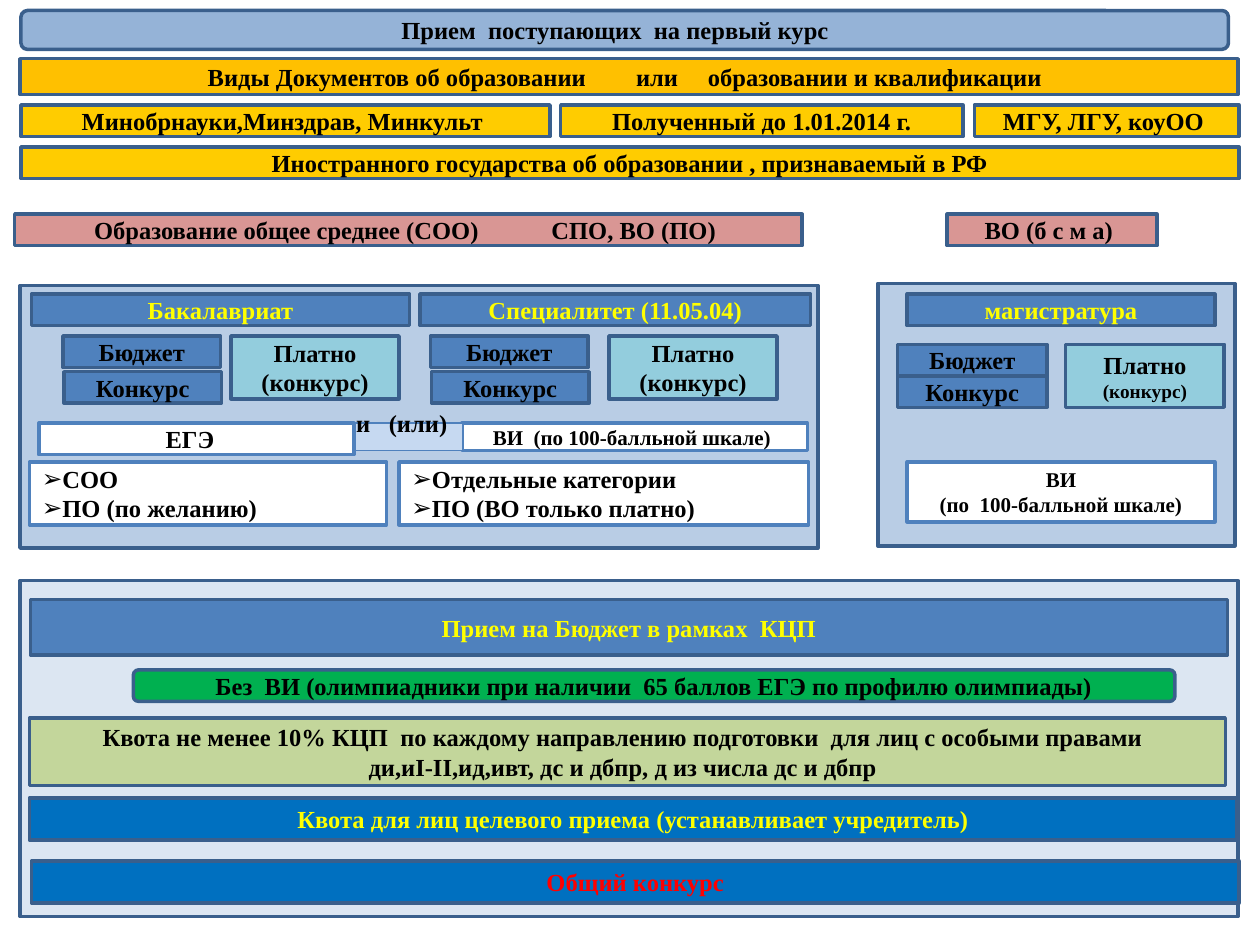
from dataclasses import dataclass

from lxml import etree
from pptx import Presentation, util as u
from pptx.dml.color import RGBColor
from pptx.enum import shapes, text
from pptx.oxml.ns import qn

COLS, ROWS = 120, 90
FONT = "Times New Roman"
NAVY, BLUE, WHITE, BLACK, YELLOW, RED = (
    "3A5F8C", "4F81BD", "FFFFFF", "000000", "FFFF00", "FF0000")
PALE, PINK, GOLD, AQUA, DEEP = "B9CDE5", "D99694", "FFCC00", "93CDDD", "0070C0"

prs = Presentation()
prs.slide_width, prs.slide_height = u.Inches(10), u.Inches(7.5)


@dataclass
class Box:
    """A rectangle in grid cells; left and right are text insets in inches."""
    col: float
    row: float
    cols: float
    rows: float
    fill: str
    label: str = ""
    color: str = BLACK
    size: float = 14
    last_size: float = 0
    line: str = NAVY
    width: float = 2
    rounded: bool = False
    bullets: bool = False
    tabs: tuple[float, ...] = ()
    left: float = 0.1
    right: float = 0.1
    bottom: float = 0


def rgb(value: str) -> RGBColor:
    return RGBColor.from_string(value)


def across(share: float) -> int:
    return round(prs.slide_width * share / COLS)


def down(share: float) -> int:
    return round(prs.slide_height * share / ROWS)


def add_bullet(p) -> None:
    pPr = p._p.get_or_add_pPr()
    indent = u.Inches(0.16)
    pPr.set("marL", str(indent))
    pPr.set("indent", str(-indent))
    etree.SubElement(pPr, qn("a:buFont"), typeface="Arial")
    etree.SubElement(pPr, qn("a:buChar"), char="➢")


def add_tabs(p, stops: tuple[float, ...]) -> None:
    tab_list = etree.SubElement(p._p.get_or_add_pPr(), qn("a:tabLst"))
    for stop in stops:
        etree.SubElement(tab_list, qn("a:tab"), pos=str(u.Inches(stop)), algn="l")


def write_label(sp, box: Box) -> None:
    tf = sp.text_frame
    tf.text = box.label
    tf.word_wrap = True
    tf.margin_left, tf.margin_right = u.Inches(box.left), u.Inches(box.right)
    tf.vertical_anchor = text.MSO_ANCHOR.MIDDLE
    if box.bottom:
        tf.vertical_anchor = text.MSO_ANCHOR.BOTTOM
        tf.margin_top, tf.margin_bottom = 0, u.Inches(box.bottom)
    for i, p in enumerate(tf.paragraphs):
        flush = box.bullets or box.tabs
        p.alignment = text.PP_ALIGN.LEFT if flush else text.PP_ALIGN.CENTER
        if box.bullets:
            add_bullet(p)
        if box.tabs:
            add_tabs(p, box.tabs)
        for r in p.runs:
            r.font.name, r.font.bold = FONT, True
            r.font.size = u.Pt(box.last_size if i and box.last_size else box.size)
            r.font.color.rgb = rgb(box.color)


def draw(s, box: Box) -> None:
    kind = shapes.MSO_SHAPE.ROUNDED_RECTANGLE if box.rounded else shapes.MSO_SHAPE.RECTANGLE
    sp = s.shapes.add_shape(kind, across(box.col), down(box.row),
                            across(box.cols), down(box.rows))
    sp.shadow.inherit = False
    sp.fill.solid()
    sp.fill.fore_color.rgb = rgb(box.fill)
    sp.line.color.rgb = rgb(box.line)
    sp.line.width = u.Pt(box.width)
    if box.label:
        write_label(sp, box)


def funding(col: float, row: float, cols: float, step: float, shift: float,
            paid_col: float, paid_cols: float, paid_size: float = 14) -> list[Box]:
    """State-funded and paid places of one programme."""
    return [
        Box(paid_col, row, paid_cols, 6, AQUA, "Платно\n(конкурс)", last_size=paid_size),
        Box(col, row, cols, 3, BLUE, "Бюджет"),
        Box(col + shift, row + step, cols, 3, BLUE, "Конкурс"),
    ]


PANELS = [Box(83.6, 27, 34, 25, PALE), Box(1.9, 27.2, 76, 25, PALE)]

DOCUMENTS = [
    Box(2, 1, 115, 3.7, "95B3D7", "Прием  поступающих  на первый курс",
        rounded=True, right=0.25),
    Box(1.9, 5.6, 116, 3.4, "FFC000",
        "Виды Документов об образовании\tили\tобразовании и квалификации",
        left=1.49, tabs=(3.4, 3.97)),
    Box(2, 10, 50.4, 3, GOLD, "Минобрнауки,Минздрав, Минкульт", right=0.15),
    Box(53.4, 10, 38.3, 3, GOLD, "Полученный до 1.01.2014 г."),
    Box(92.8, 10, 25.2, 3, GOLD, "МГУ, ЛГУ, коуОО", right=0.15),
    Box(2, 14, 116, 3, GOLD,
        "Иностранного государства об образовании , признаваемый в РФ"),
    Box(1.4, 20.4, 75, 3, PINK, "Образование общее среднее (СОО)\tСПО, ВО (ПО)",
        left=0.63, tabs=(3.63,)),
    Box(90.2, 20.4, 20, 3, PINK, "ВО (б с м а)", right=0.15),
]

PROGRAMMES = [
    Box(3, 28, 36, 3, BLUE, "Бакалавриат", YELLOW),
    Box(40, 28, 37.2, 3, BLUE, "Специалитет (11.05.04)", YELLOW),
    Box(86.4, 28, 29.3, 3, BLUE, "магистратура", YELLOW),
    *funding(6, 32, 15, 3.4, 0.1, 22, 16),
    *funding(41, 32, 15, 3.4, 0.1, 58, 16),
    *funding(85.5, 32.8, 14.2, 3, 0, 101.5, 15.1, paid_size=11),
]

EXAMS = [
    Box(44, 40.3, 32.9, 2.6, WHITE, "ВИ  (по 100-балльной шкале)",
        size=12, line=BLUE, right=0.14),
    Box(32, 40.3, 12.1, 2.6, "C6D9F1", "и\t(или)", line=BLUE, width=0,
        left=0.16, right=0, tabs=(0.26,), bottom=0.1),
    Box(3.7, 40.3, 30, 3, WHITE, "ЕГЭ", line=BLUE, right=0.2),
    Box(38, 44, 39, 6, WHITE, "Отдельные категории\nПО (ВО только платно)",
        line=BLUE, bullets=True),
    Box(2.8, 44, 34, 6, WHITE, "СОО\nПО (по желанию)", line=BLUE, bullets=True),
    Box(86.4, 44, 29.3, 5.7, WHITE, "ВИ\n(по  100-балльной шкале)",
        size=12, line=BLUE),
]

ADMISSION = [
    Box(1.9, 55.3, 116, 32, "DCE6F2"),
    Box(2.9, 57.1, 114, 5.3, BLUE, "Прием на Бюджет в рамках  КЦП", YELLOW),
    Box(2.8, 68.4, 113.9, 6.4, "C3D69B",
        "Квота не менее 10% КЦП  по каждому направлению подготовки  для лиц с особыми правами\n"
        "ди,иI-II,ид,ивт, дс и дбпр, д из числа дс и дбпр", right=0.17),
    Box(2.8, 76, 115, 4, DEEP,
        "Квота для лиц целевого приема (устанавливает учредитель)", YELLOW),
    Box(12.7, 63.8, 99.2, 3, "00B050",
        "Без  ВИ (олимпиадники при наличии  65 баллов ЕГЭ по профилю олимпиады)",
        rounded=True),
    Box(3, 82, 115, 4, DEEP, "Общий конкурс", RED),
]


def main() -> None:
    s = prs.slides.add_slide(prs.slide_layouts[6])
    for box in PANELS + DOCUMENTS + PROGRAMMES + EXAMS + ADMISSION:
        draw(s, box)
    prs.save("out.pptx")


if __name__ == "__main__":
    main()
